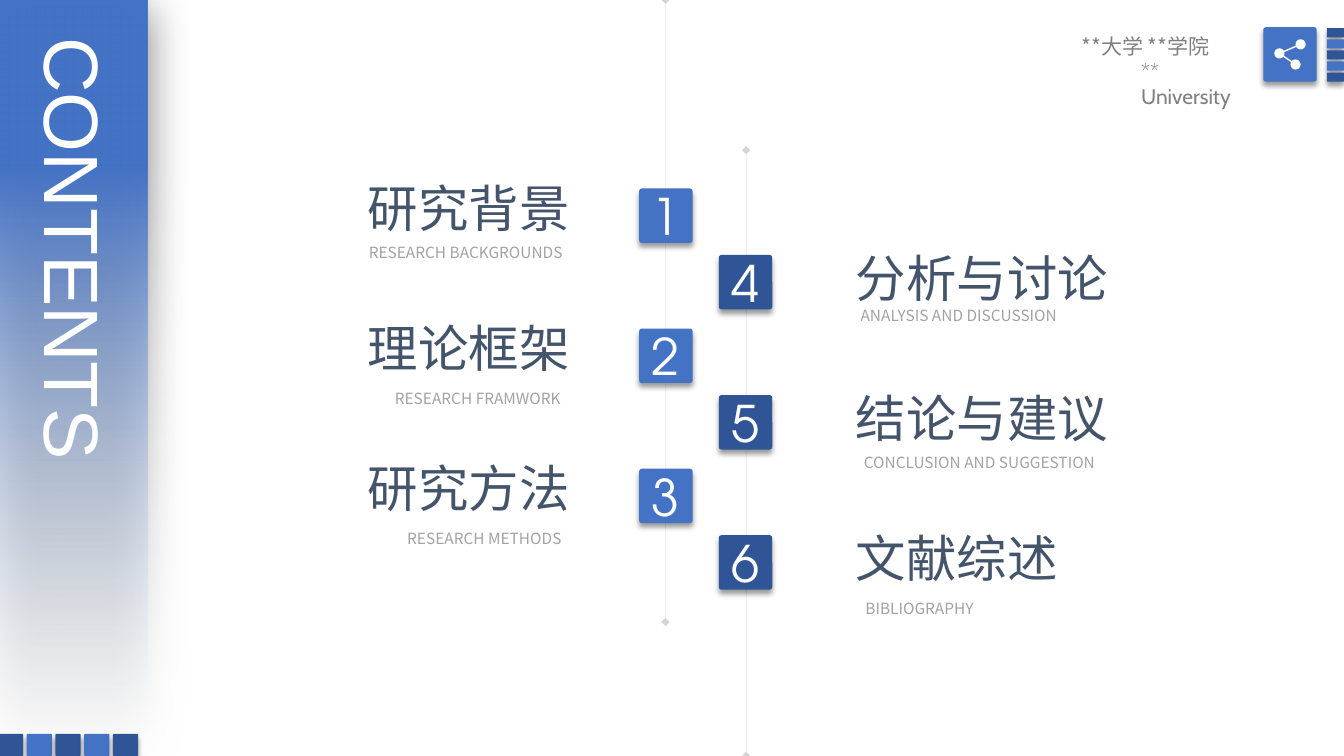
import math

import lxml.etree
import pptx
import pptx.dml.color
import pptx.enum.shapes
import pptx.enum.text
import pptx.oxml.ns
import pptx.util

Inches = pptx.util.Inches
Pt = pptx.util.Pt
RGBColor = pptx.dml.color.RGBColor
Align = pptx.enum.text.PP_ALIGN
Shapes = pptx.enum.shapes.MSO_SHAPE
qn = pptx.oxml.ns.qn

BLUE = RGBColor(0x44, 0x72, 0xC4)
NAVY = RGBColor(0x2F, 0x55, 0x97)
PALE = RGBColor(0xF7, 0xFA, 0xFD)
WHITE = RGBColor(0xFF, 0xFF, 0xFF)
SLATE = RGBColor(0x44, 0x54, 0x6A)
GREY = RGBColor(0x80, 0x80, 0x80)
SILVER = RGBColor(0xA2, 0xA2, 0xA2)

CJK = "Noto Sans CJK SC"
FORMATS = {
    "banner": {"size": Pt(55), "name": "Arial", "color": WHITE},
    "number": {"size": Pt(36), "name": "TeX Gyre Adventor", "color": WHITE},
    "title": {"size": Pt(36), "name": CJK, "color": SLATE},
    "caption": {"size": Pt(11), "name": CJK, "color": SILVER},
    "school": {"size": Pt(15), "name": CJK, "color": GREY},
    "university": {"size": Pt(15), "name": "Cabin", "color": GREY},
}
TILE_SHADOW = (40, 4, 3, 90)
BANNER_SHADOW = (50, 31, 6, 97)
ROW_STEP = 1.39

COLUMNS = [
    {"tile": (6.34, 1.87), "title": (3.55, 1.71), "color": BLUE, "first": 1, "rows": [
        ("研究背景", 2.22, "RESEARCH BACKGROUNDS", (3.51, 2.36, 2.22, 0.29)),
        ("理论框架", 2.22, "RESEARCH FRAMWORK", (3.76, 3.81, 1.96, 0.29)),
        ("研究方法", 2.22, "RESEARCH METHODS", (3.9, 5.2, 1.81, 0.29)),
    ]},
    {"tile": (7.13, 2.53), "title": (8.39, 2.4), "color": NAVY, "first": 4, "rows": [
        ("分析与讨论", 2.73, "ANALYSIS AND DISCUSSION", (8.35, 2.99, 2.32, 0.29)),
        ("结论与建议", 2.73, "CONCLUSION AND SUGGESTION", (8.38, 4.45, 2.67, 0.29)),
        ("文献综述", 2.22, "BIBLIOGRAPHY", (8.46, 5.89, 1.32, 0.29)),
    ]},
]


class ContentsSlide:
    def __init__(self, deck):
        self.page = deck.slides.add_slide(deck.slide_layouts[6])
        self.shapes = self.page.shapes

    def add_alpha(self, color_parent, percent):
        color = color_parent.find(qn("a:srgbClr"))
        lxml.etree.SubElement(color, qn("a:alpha"), val=str(percent * 1000))

    def add_span(self, para, text, style):
        span = para.add_run()
        span.text = text
        for key, value in FORMATS[style].items():
            if key == "color":
                span.font.color.rgb = value
            else:
                setattr(span.font, key, value)
        lxml.etree.SubElement(span.font._element, qn("a:ea"), typeface=span.font.name)

    def shade(self, shape, shadow):
        alpha, blur, distance, angle = shadow
        shape.shadow.inherit = False
        effects = shape.element.spPr.find(qn("a:effectLst"))
        outer = lxml.etree.SubElement(
            effects, qn("a:outerShdw"), blurRad=str(Pt(blur)), dist=str(Pt(distance)),
            dir=str(angle * 60000), algn="ctr", rotWithShape="0")
        lxml.etree.SubElement(outer, qn("a:srgbClr"), val="000000")
        self.add_alpha(outer, alpha)

    def rail(self, x, top, bottom):
        line = self.shapes.add_connector(
            pptx.enum.shapes.MSO_CONNECTOR.STRAIGHT,
            Inches(x), Inches(top), Inches(x), Inches(bottom))
        line.line.width = Pt(0.25)
        line.line.color.rgb = GREY
        outline = line.line._get_or_add_ln()
        self.add_alpha(outline.find(qn("a:solidFill")), 33)
        for end in ("a:headEnd", "a:tailEnd"):
            lxml.etree.SubElement(outline, qn(end), type="diamond")
        lxml.etree.SubElement(line.element.spPr, qn("a:effectLst"))

    def banner(self, left, top, width, height):
        box = self.shapes.add_shape(Shapes.RECTANGLE, *map(Inches, (left, top, width, height)))
        box.rotation = 90
        box.line.fill.background()
        box.fill.gradient()
        box.fill.gradient_angle = 180
        stops = box.fill.gradient_stops
        for stop, color, position in zip(stops, (PALE, BLUE), (0, 0.78)):
            stop.color.rgb = color
            stop.position = position
        self.add_alpha(stops[0]._gs, 0)
        self.shade(box, BANNER_SHADOW)

    def tile(self, left, top, width, height, color, number=None):
        box = self.shapes.add_shape(
            Shapes.ROUNDED_RECTANGLE, *map(Inches, (left, top, width, height)))
        box.adjustments[0] = 0.05
        box.fill.solid()
        box.fill.fore_color.rgb = color
        box.line.fill.background()
        self.shade(box, TILE_SHADOW)
        if number:
            frame = box.text_frame
            frame.vertical_anchor = pptx.enum.text.MSO_ANCHOR.MIDDLE
            frame.paragraphs[0].alignment = Align.CENTER
            self.add_span(frame.paragraphs[0], str(number), "number")

    def text(self, place, lines, align=Align.LEFT, wrap=True, vertical=False):
        box = self.shapes.add_textbox(*map(Inches, place))
        frame = box.text_frame
        frame.word_wrap = wrap
        frame.auto_size = pptx.enum.text.MSO_AUTO_SIZE.SHAPE_TO_FIT_TEXT
        if vertical:
            frame._txBody.bodyPr.set("vert", "eaVert")
        for index, (text, style, indent) in enumerate(lines):
            para = frame.add_paragraph() if index else frame.paragraphs[0]
            para.alignment = align
            if indent:
                para._p.get_or_add_pPr().set("marL", str(Inches(indent)))
            self.add_span(para, text, style)

    def share_icon(self, upper, hub, lower, radius):
        up = math.degrees(math.atan2(upper[1] - hub[1], upper[0] - hub[0]))
        down = math.degrees(math.atan2(lower[1] - hub[1], lower[0] - hub[0]))
        gap = 8
        arcs = [
            (upper, up + 180 + gap, up + 540 - gap),
            (hub, up + gap, down - gap),
            (lower, down + 180 + gap, down + 540 - gap),
            (hub, down + gap, up + 360 - gap),
        ]
        points = []
        for (x, y), start, stop in arcs:
            for step in range(25):
                angle = math.radians(start + (stop - start) * step / 24)
                points.append((Inches(x + radius * math.cos(angle)),
                               Inches(y + radius * math.sin(angle))))
        builder = self.shapes.build_freeform(*points[0])
        builder.add_line_segments(points[1:], close=True)
        icon = builder.convert_to_shape()
        icon.fill.solid()
        icon.fill.fore_color.rgb = WHITE
        icon.line.fill.background()
        icon.shadow.inherit = False


def main():
    deck = pptx.Presentation()
    deck.slide_width = Inches(13.33)
    deck.slide_height = Inches(7.5)
    slide = ContentsSlide(deck)

    slide.rail(7.4, 1.49, 7.5)
    slide.rail(6.6, 0, 6.17)
    slide.banner(-3, 2.99, 7.46, 1.47)
    for index in range(5):
        color = BLUE if index % 2 else NAVY
        slide.tile(-0.02 + 0.285 * index, 7.28, 0.25, 0.22, color)
        slide.tile(13.16, 0.28 + 0.11 * index, 0.17, 0.09, color)
    slide.text((0.12, 0.27, 1.13, 4.94), [("CONTENTS", "banner", 0)], vertical=True)

    for column in COLUMNS:
        tile_left, tile_top = column["tile"]
        title_left, title_top = column["title"]
        for index, (title, width, caption, place) in enumerate(column["rows"]):
            drop = ROW_STEP * index
            slide.tile(tile_left, tile_top + drop, 0.53, 0.54,
                       column["color"], column["first"] + index)
            slide.text((title_left, title_top + drop, width, 0.71),
                       [(title, "title", 0)], wrap=False)
            slide.text(place, [(caption, "caption", 0)], Align.CENTER)

    slide.tile(12.53, 0.27, 0.53, 0.54, BLUE)
    slide.share_icon((12.9, 0.44), (12.69, 0.53), (12.85, 0.64), 0.05)
    slide.text((10.15, 0.28, 2.37, 0.63), [
        ("**大学 **学院", "school", 0.48),
        ("** University", "university", 1.07),
    ])
    deck.save("out.pptx")


if __name__ == "__main__":
    main()
